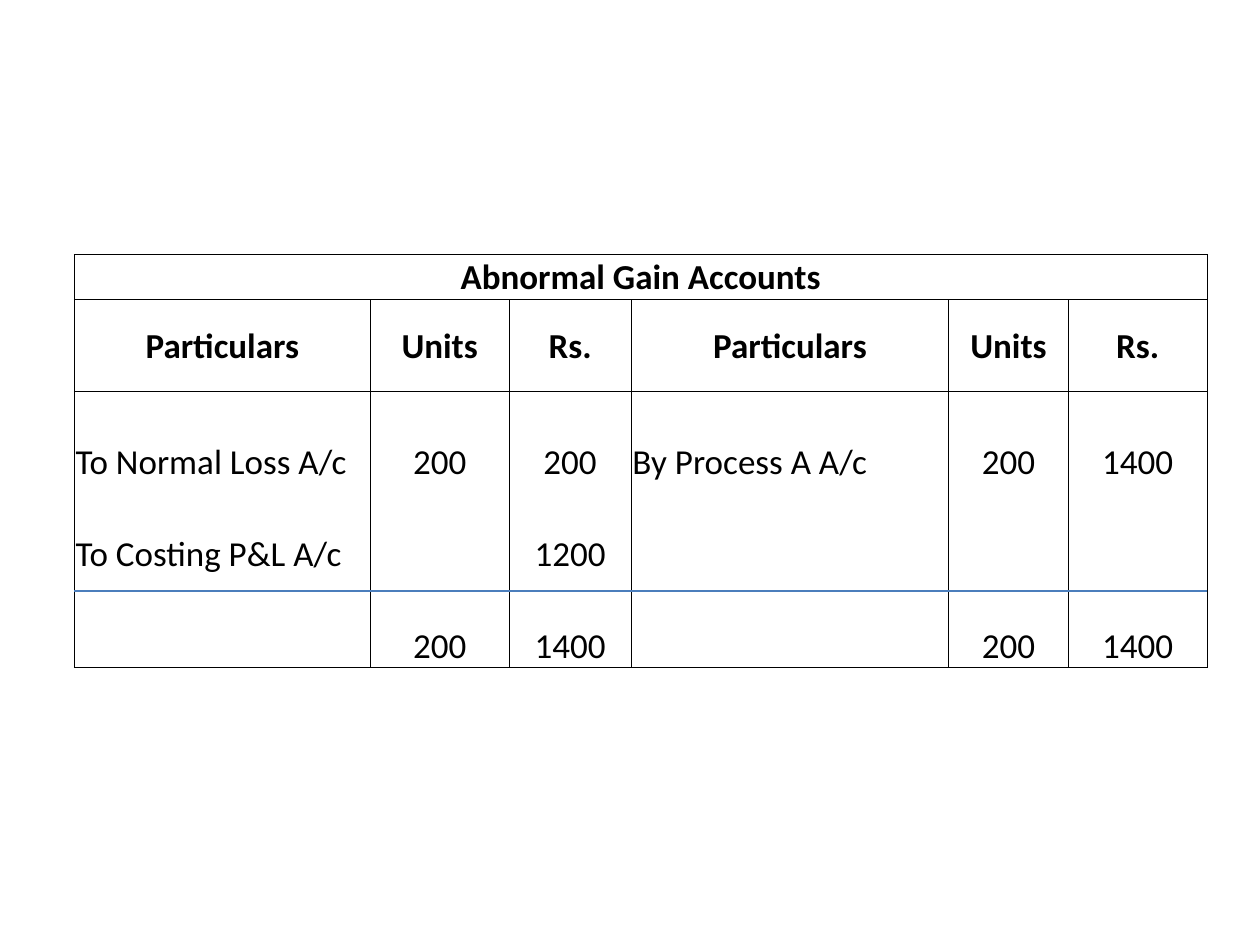
from lxml import etree
from pptx import Presentation
from pptx.dml.color import RGBColor
from pptx.enum.shapes import MSO_CONNECTOR
from pptx.enum.text import MSO_ANCHOR, PP_ALIGN
from pptx.oxml.ns import qn
from pptx.util import Inches, Pt

BLACK = RGBColor(0x00, 0x00, 0x00)
BLUE = RGBColor(0x4B, 0x7E, 0xBC)
STRAIGHT = MSO_CONNECTOR.STRAIGHT
MIDDLE, BOTTOM = MSO_ANCHOR.MIDDLE, MSO_ANCHOR.BOTTOM
LEFT, CENTER = PP_ALIGN.LEFT, PP_ALIGN.CENTER

TABLE_LEFT, TABLE_TOP = 0.59, 2.02
RULE_TOP = 4.69
COLUMN_WIDTHS = [2.35, 1.1, 0.97, 2.52, 0.95, 1.1]
ROW_HEIGHTS = [0.36] + [0.73] * 4
PARTICULARS_COLUMNS = (0, 3)
ACCOUNT_ROWS = [
    ["Abnormal Gain Accounts", "", "", "", "", ""],
    ["Particulars", "Units", "Rs."] * 2,
    ["To Normal Loss A/c", "200", "200", "By Process A A/c", "200", "1400"],
    ["To Costing P&L A/c", "", "1200", "", "", ""],
    ["", "200", "1400"] * 2,
]
ROW_BORDERS = ["LRTB", "LRTB", "LRT", "LR", "LRB"]


def write_text(frame, text, size=20, bold=False, align=CENTER):
    para = frame.paragraphs[0]
    para.alignment = align
    span = para.add_run()
    span.text = text
    span.font.name = "Calibri"
    span.font.size = Pt(size)
    span.font.bold = bold
    span.font.color.rgb = BLACK


def set_borders(cell, visible_sides):
    properties = cell._tc.get_or_add_tcPr()
    for side in "LRTB":
        border = etree.SubElement(properties, qn(f"a:ln{side}"), w=str(Pt(0.5)))
        if side in visible_sides:
            fill = etree.SubElement(border, qn("a:solidFill"))
            etree.SubElement(fill, qn("a:srgbClr"), val=str(BLACK))
        else:
            etree.SubElement(border, qn("a:noFill"))


def format_cell(cell, borders, anchor):
    set_borders(cell, borders)
    cell.fill.background()
    cell.vertical_anchor = anchor
    cell.margin_left = cell.margin_right = cell.margin_top = Inches(0.01)
    cell.margin_bottom = Inches(0)


def add_account_table(page):
    table = page.shapes.add_table(
        len(ROW_HEIGHTS), len(COLUMN_WIDTHS),
        Inches(TABLE_LEFT), Inches(TABLE_TOP),
        Inches(sum(COLUMN_WIDTHS)), Inches(sum(ROW_HEIGHTS)),
    ).table
    table.first_row = False
    table.horz_banding = False
    for column, width in zip(table.columns, COLUMN_WIDTHS):
        column.width = Inches(width)
    for row, height in zip(table.rows, ROW_HEIGHTS):
        row.height = Inches(height)
    table.cell(0, 0).merge(table.cell(0, len(COLUMN_WIDTHS) - 1))

    for row_index, (texts, borders) in enumerate(zip(ACCOUNT_ROWS, ROW_BORDERS)):
        heading = row_index < 2
        for column_index, text in enumerate(texts):
            cell = table.cell(row_index, column_index)
            format_cell(cell, borders, MIDDLE if heading else BOTTOM)
            if text:
                entry = not heading and column_index in PARTICULARS_COLUMNS
                write_text(cell.text_frame, text, bold=heading,
                           align=LEFT if entry else CENTER)


def add_rule(page, left, right, top):
    rule = page.shapes.add_connector(
        STRAIGHT, Inches(left), Inches(top), Inches(right), Inches(top))
    rule.line.color.rgb = BLUE
    rule.line.width = Pt(0.75)
    etree.SubElement(rule._element.spPr, qn("a:effectLst"))


def main():
    deck = Presentation()
    deck.slide_width, deck.slide_height = Inches(10), Inches(7.5)
    page = deck.slides.add_slide(deck.slide_layouts[6])
    add_account_table(page)
    add_rule(page, TABLE_LEFT, TABLE_LEFT + sum(COLUMN_WIDTHS), RULE_TOP)
    deck.save("out.pptx")


if __name__ == "__main__":
    main()
